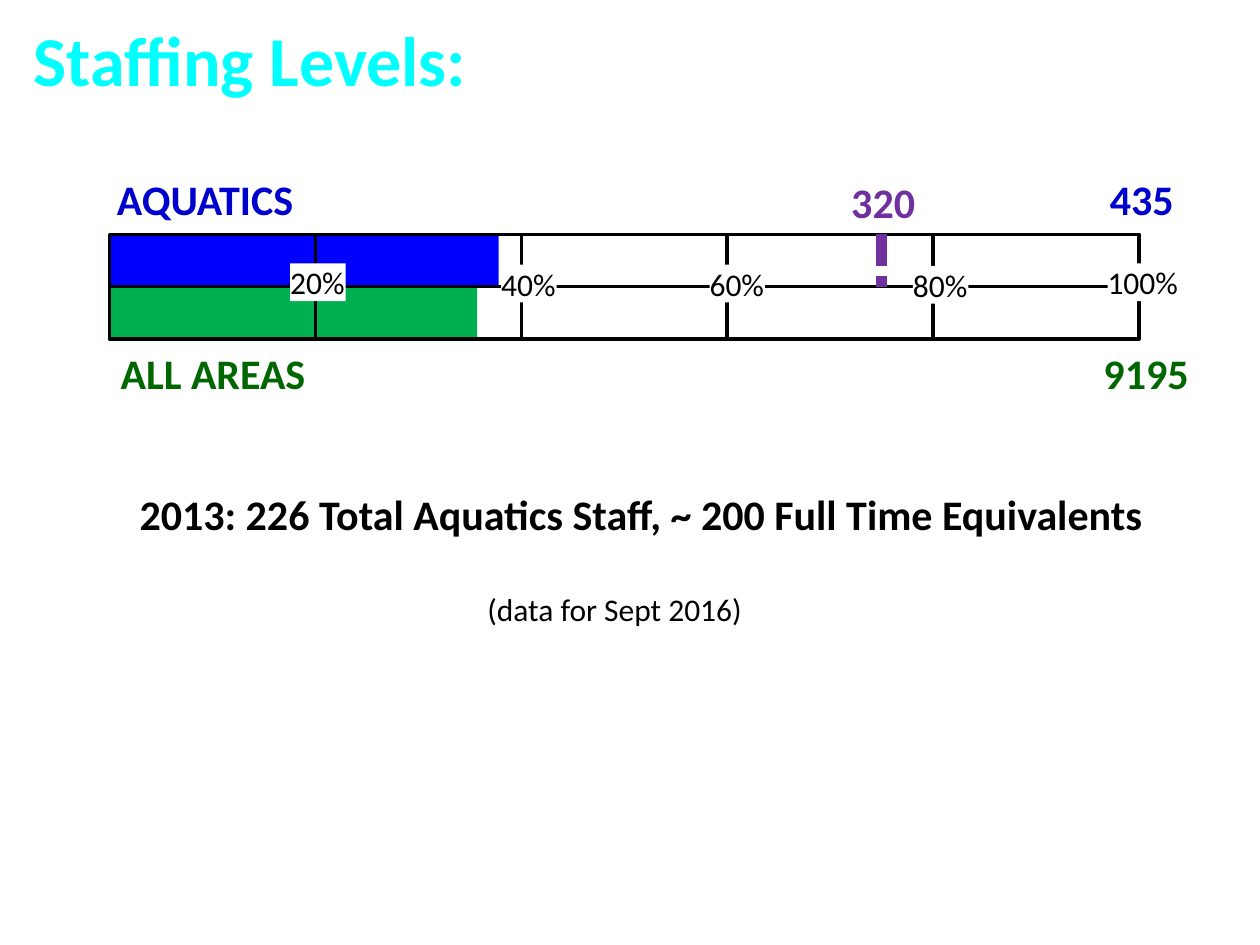
from lxml import etree
from pptx import Presentation
from pptx.dml.color import RGBColor
from pptx.enum.dml import MSO_LINE
from pptx.enum.shapes import MSO_CONNECTOR, MSO_SHAPE
from pptx.enum.text import MSO_ANCHOR
from pptx.oxml.ns import qn
from pptx.util import Inches, Pt

RECT, STRAIGHT = MSO_SHAPE.RECTANGLE, MSO_CONNECTOR.STRAIGHT
DOTTED, MIDDLE = MSO_LINE.SQUARE_DOT, MSO_ANCHOR.MIDDLE
FONT = "Calibri"
COLORS = {
    "title": "00FFFF", "aquatics": "0000CC", "areas": "006600",
    "aquatics_bar": "0000FF", "areas_bar": "00B050",
    "target": "7030A0", "ink": "000000", "paper": "FFFFFF",
}

# Content
TITLE = "Staffing Levels:"
BARS = [("aquatics_bar", 0.378), ("areas_bar", 0.357)]  # share of full staffing
# name, total, color, left, top, offset of the total
CAPTIONS = [
    ("AQUATICS", "435", "aquatics", 0.83, 1.33, 7.88),
    ("ALL AREAS", "9195", "areas", 0.86, 2.71, 7.8),
]
# text, width, shift from its tick, top
TICKS = [
    ("20%", 0.44, 0.02, 2.09), ("40%", 0.44, 0.06, 2.1),
    ("60%", 0.44, 0.08, 2.1), ("80%", 0.44, 0.06, 2.11),
    ("100%", 0.56, 0.03, 2.09),
]
TARGET, TARGET_SHARE = "320", 0.75
SUMMARY = "2013: 226 Total Aquatics Staff, ~ 200 Full Time Equivalents"
DATA_NOTE = "(data for Sept 2016)"

# Gauge grid, in inches
LEFT, TOP, WIDTH, ROW = 0.87, 1.86, 8.17, 0.415
COLUMN = WIDTH / len(TICKS)

prs = Presentation()
prs.slide_width, prs.slide_height = Inches(10), Inches(7.5)
slide = prs.slides.add_slide(prs.slide_layouts[6])


def rgb(name):
    return RGBColor.from_string(COLORS[name])


def style(paragraph, size, color, bold=True):
    font = paragraph.font
    font.name, font.size, font.bold = FONT, Pt(size), bold
    font.color.rgb = rgb(color)


def add_text(text, left, top, width, height, size, color):
    box = slide.shapes.add_textbox(*map(Inches, (left, top, width, height)))
    box.text_frame.word_wrap = True
    paragraph = box.text_frame.paragraphs[0]
    paragraph.text = text
    style(paragraph, size, color)
    return box.text_frame


def add_rect(left, top, width, height, fill=None, line=None):
    rect = slide.shapes.add_shape(RECT, *map(Inches, (left, top, width, height)))
    rect.shadow.inherit = False
    if fill:
        rect.fill.solid()
        rect.fill.fore_color.rgb = rgb(fill)
    else:
        rect.fill.background()
    if line:
        rect.line.color.rgb = rgb(line)
        rect.line.width = Pt(2)
    else:
        rect.line.fill.background()
    return rect


# Title
add_text(TITLE, 0.17, 0.08, 3.91, 0.77, 40, "title")

# Bars, then the grid over them
for row, (color, share) in enumerate(BARS):
    add_rect(LEFT, TOP + row * ROW, share * WIDTH, ROW, fill=color)
for row in range(len(BARS)):
    for column in range(len(TICKS)):
        add_rect(LEFT + column * COLUMN, TOP + row * ROW, COLUMN, ROW, line="ink")

# Percentage labels
for number, (label, width, shift, top) in enumerate(TICKS, 1):
    center = LEFT + number * COLUMN + shift
    frame = add_rect(center - width / 2, top, width, 0.3, fill="paper").text_frame
    frame.margin_left = frame.margin_right = frame.margin_top = frame.margin_bottom = 0
    frame.word_wrap, frame.vertical_anchor = False, MIDDLE
    frame.text = label
    style(frame.paragraphs[0], 18, "ink", bold=False)

# Captions with their totals at a tab stop
for name, total, color, left, top, offset in CAPTIONS:
    frame = add_text(f"{name}\t{total}", left, top, 8.77, 0.5, 24, color)
    properties = frame.paragraphs[0]._p.get_or_add_pPr()
    tabs = etree.Element(qn("a:tabLst"))
    etree.SubElement(tabs, qn("a:tab"), pos=str(Inches(offset)), algn="l")
    properties.insert(0, tabs)

# Summary and date of the data
summary = add_text(SUMMARY, 1.01, 3.83, 8.25, 1.21, 24, "ink")
note = summary.add_paragraph()
note.text = DATA_NOTE
style(note, 18, "ink", bold=False)
note.space_before = Pt(29)
note._p.get_or_add_pPr().set("marL", str(Inches(2.76)))

# Target marker
target_x = LEFT + TARGET_SHARE * WIDTH
marker = slide.shapes.add_connector(
    STRAIGHT, *map(Inches, (target_x, TOP, target_x, TOP + ROW)))
marker.line.color.rgb = rgb("target")
marker.line.width, marker.line.dash_style = Pt(6), DOTTED
etree.SubElement(marker._element.spPr, qn("a:effectLst"))
add_text(TARGET, target_x - 0.34, 1.35, 0.75, 0.5, 24, "target")

prs.save("out.pptx")
